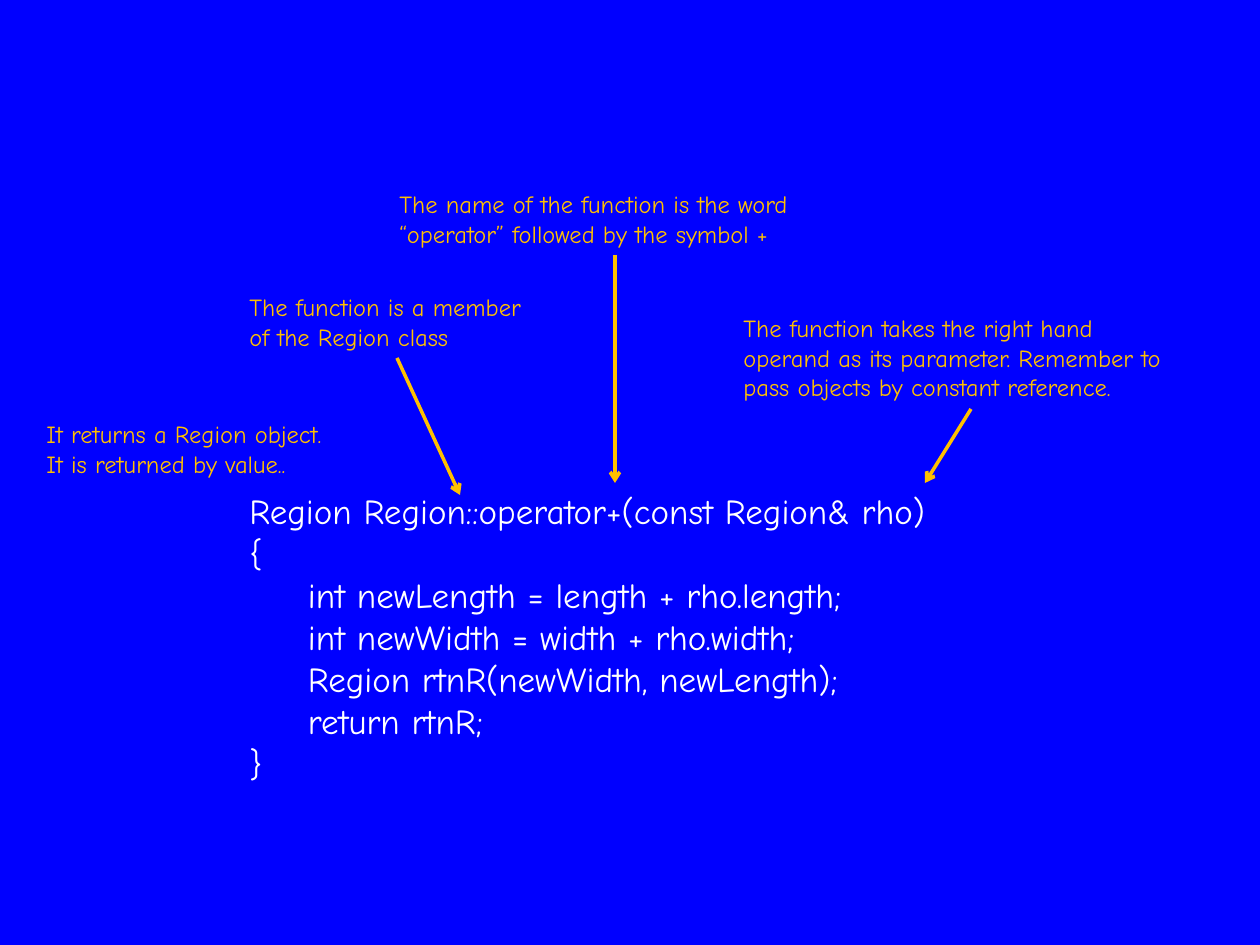
from lxml.etree import SubElement
from pptx import Presentation
from pptx.dml.color import RGBColor
from pptx.enum.shapes import MSO_CONNECTOR
from pptx.enum.text import MSO_AUTO_SIZE
from pptx.oxml.ns import qn
from pptx.util import Pt

PX = 914400 / 126
BLUE, WHITE, AMBER = "0000FF", "FFFFFF", "FFC000"


def px(value):
    return round(value * PX)


def add_text(text, *, left, top, width, height, size, color):
    """Add a left-aligned text box with one paragraph per line of text."""
    shape = slide.shapes.add_textbox(px(left), px(top), px(width), px(height))
    frame = shape.text_frame
    frame.word_wrap = False
    frame.auto_size = MSO_AUTO_SIZE.SHAPE_TO_FIT_TEXT
    frame.text = text
    for paragraph in frame.paragraphs:
        for run in paragraph.runs:
            run.font.name = "Comic Neue"
            run.font.size = Pt(size)
            run.font.color.rgb = RGBColor.from_string(color)


presentation = Presentation()
presentation.slide_width = px(1260)
presentation.slide_height = px(945)
slide = presentation.slides.add_slide(presentation.slide_layouts[6])
slide.background.fill.solid()
slide.background.fill.fore_color.rgb = RGBColor.from_string(BLUE)

code = """Region Region::operator+(const Region& rho)
{
     int newLength = length + rho.length;
     int newWidth = width + rho.width;
     Region rtnR(newWidth, newLength);
     return rtnR;
}"""
add_text(code, left=237, top=483, width=756, height=310, size=20, color=WHITE)

# Each note: text, left, top, width, height
notes = [
    ("The name of the function is the word\n“operator” followed by the symbol +", 387, 183, 456, 72),
    ("The function is a member\nof the Region class", 237, 286, 319, 72),
    ("It returns a Region object.\nIt is returned by value..", 34, 413, 336, 72),
    ("The function takes the right hand\noperand as its parameter. Remember to\npass objects by constant reference.",
     731, 307, 481, 102),
]
for text, left, top, width, height in notes:
    add_text(text, left=left, top=top, width=width, height=height, size=14, color=AMBER)

# Each arrow runs from a note to the code: start x, start y, end x, end y
arrows = [(615, 255, 615, 483), (397, 358, 460, 495), (971, 409, 925, 483)]
for points in arrows:
    arrow = slide.shapes.add_connector(MSO_CONNECTOR.STRAIGHT, *map(px, points))
    arrow.line.color.rgb = RGBColor.from_string(AMBER)
    arrow.line.width = Pt(2)
    SubElement(arrow.line._get_or_add_ln(), qn("a:tailEnd"), type="arrow")
    SubElement(arrow._element.spPr, qn("a:effectLst"))

presentation.save("out.pptx")
